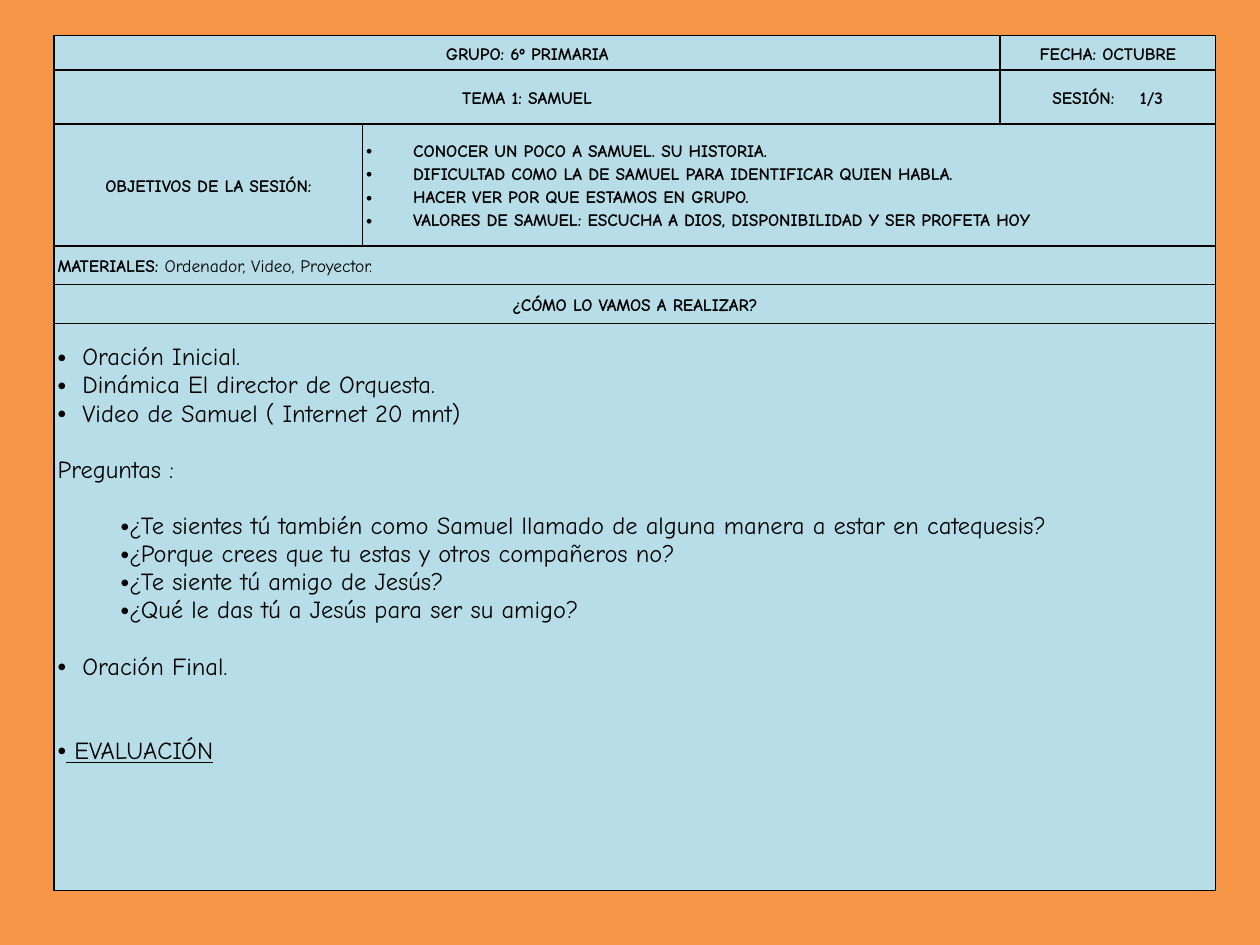
import pptx
import pptx.util
import pptx.dml.color
import pptx.enum.text
import pptx.oxml.ns
import lxml.etree

Cm = pptx.util.Cm
Pt = pptx.util.Pt
ALIGN = pptx.enum.text.PP_ALIGN
ANCHOR = pptx.enum.text.MSO_ANCHOR

COLORS = {"page": "F79646", "cell": "B7DEE8", "ink": "000000"}
FONT = "Comic Neue"
COLUMNS = [6.22, 12.85, 4.34]
ROWS = [0.69, 1.09, 2.46, 0.78, 0.78, 11.43]
MERGES = [(0, 0, 1), (1, 0, 1), (2, 1, 2), (3, 0, 2), (4, 0, 2), (5, 0, 2)]
HEADINGS = [
    (0, 0, "GRUPO: 6º PRIMARIA"),
    (0, 2, "FECHA: OCTUBRE"),
    (1, 0, "TEMA 1: SAMUEL"),
    (2, 0, "OBJETIVOS DE LA SESIÓN:"),
    (4, 0, "¿CÓMO LO VAMOS A REALIZAR?"),
]
GOALS = [
    "CONOCER UN POCO A SAMUEL. SU HISTORIA.",
    "DIFICULTAD COMO LA DE SAMUEL PARA IDENTIFICAR QUIEN HABLA.",
    "HACER VER POR QUE ESTAMOS EN GRUPO.",
    "VALORES DE SAMUEL: ESCUCHA A DIOS, DISPONIBILIDAD Y SER PROFETA HOY",
]
OPENING = [
    "Oración Inicial.",
    "Dinámica El director de Orquesta.",
    "Video de Samuel ( Internet 20 mnt)",
]
QUESTIONS = [
    "¿Te sientes tú también como Samuel llamado de alguna manera a estar en catequesis?",
    "¿Porque crees que tu estas y otros compañeros no?",
    "¿Te siente tú amigo de Jesús?",
    "¿Qué le das tú a Jesús para ser su amigo?",
]
LINE = 16


def color(name):
    """Return the named palette colour."""
    return pptx.dml.color.RGBColor.from_string(COLORS[name])


def add_element(parent, tag, **attributes):
    """Append a DrawingML element and return it."""
    return lxml.etree.SubElement(parent, pptx.oxml.ns.qn(tag), attributes)


def add_span(para, text, *, size=10, bold=True, underline=None, tracking=None):
    """Add formatted text to a paragraph."""
    span = para.add_run()
    span.text = text
    span.font.name = FONT
    span.font.size = Pt(size)
    span.font.bold = bold
    span.font.underline = underline
    span.font.color.rgb = color("ink")
    if tracking:
        span.font._element.set("spc", str(tracking * 100))


def add_para(cell, *, align=ALIGN.LEFT, spacing=1.15, before=0,
             bullet=False, margin=0, indent=0):
    """Add a paragraph to a cell, using the first one while it is empty."""
    frame = cell.text_frame
    para = frame.paragraphs[0] if not frame.text else frame.add_paragraph()
    para.alignment = align
    para.line_spacing = spacing
    para.space_before = Pt(before)
    properties = para._p.get_or_add_pPr()
    properties.set("marL", str(Cm(margin)))
    properties.set("indent", str(Cm(indent)))
    if bullet:
        add_element(properties, "a:buFont", typeface="Arial")
        add_element(properties, "a:buChar", char="•")
    return para


def format_cell(cell):
    """Set margins, borders and fill of a cell."""
    cell.margin_left = cell.margin_right = Cm(0.07)
    cell.margin_top = cell.margin_bottom = 0
    cell.vertical_anchor = ANCHOR.MIDDLE
    properties = cell._tc.get_or_add_tcPr()
    for side in ("a:lnL", "a:lnR", "a:lnT", "a:lnB"):
        border = add_element(properties, side, w=str(Pt(1)))
        fill = add_element(border, "a:solidFill")
        add_element(fill, "a:srgbClr", val=COLORS["ink"])
    cell.fill.solid()
    cell.fill.fore_color.rgb = color("cell")


def add_grid(page):
    """Add the merged and formatted session table."""
    frame = page.shapes.add_table(
        len(ROWS), len(COLUMNS), Cm(1.09), Cm(0.72), Cm(sum(COLUMNS)), Cm(sum(ROWS)))
    table = frame.table
    table.first_row = table.horz_banding = False
    for column, width in zip(table.columns, COLUMNS):
        column.width = Cm(width)
    for row, height in zip(table.rows, ROWS):
        row.height = Cm(height)
    for row, first, last in MERGES:
        table.cell(row, first).merge(table.cell(row, last))
    for cell in table.iter_cells():
        if not cell.is_spanned:
            format_cell(cell)
    return table


def fill_header(table):
    """Write the headings, session number, goals and materials."""
    for row, column, text in HEADINGS:
        add_span(add_para(table.cell(row, column), align=ALIGN.CENTER), text)
    session = add_para(table.cell(1, 2), align=ALIGN.CENTER)
    add_span(session, "SESIÓN:")
    add_span(session, " ", tracking=11)
    add_span(session, "1/3")
    for goal in GOALS:
        add_span(add_para(table.cell(2, 1), bullet=True, margin=0.95, indent=-0.95), goal)
    materials = add_para(table.cell(3, 0))
    add_span(materials, "MATERIALES: ")
    add_span(materials, "Ordenador, Video, Proyector.", bold=False)


def fill_plan(cell):
    """Write the steps of the session."""
    cell.vertical_anchor = ANCHOR.TOP
    cell.margin_top = Cm(0.41)
    step = {"bullet": True, "margin": 0.5, "indent": -0.5}
    question = {"bullet": True, "margin": 1.27}
    lines = [(text, step) for text in OPENING]
    lines.append(("Preguntas :", {"before": LINE}))
    lines += [(text, {**question, "before": 0 if index else LINE})
              for index, text in enumerate(QUESTIONS)]
    lines.append(("Oración Final.", {**step, "before": LINE}))
    for text, layout in lines:
        add_span(add_para(cell, spacing=1.0, **layout), text, size=14, bold=False)
    closing = add_para(cell, spacing=1.0, bullet=True, before=2 * LINE)
    add_span(closing, " EVALUACIÓN", size=14, bold=False, underline=True)


def main():
    """Build the session plan slide."""
    deck = pptx.Presentation()
    deck.slide_width, deck.slide_height = Cm(25.4), Cm(19.05)
    page = deck.slides.add_slide(deck.slide_layouts[6])
    page.background.fill.solid()
    page.background.fill.fore_color.rgb = color("page")
    table = add_grid(page)
    fill_header(table)
    fill_plan(table.cell(5, 0))
    deck.save("out.pptx")


if __name__ == "__main__":
    main()
